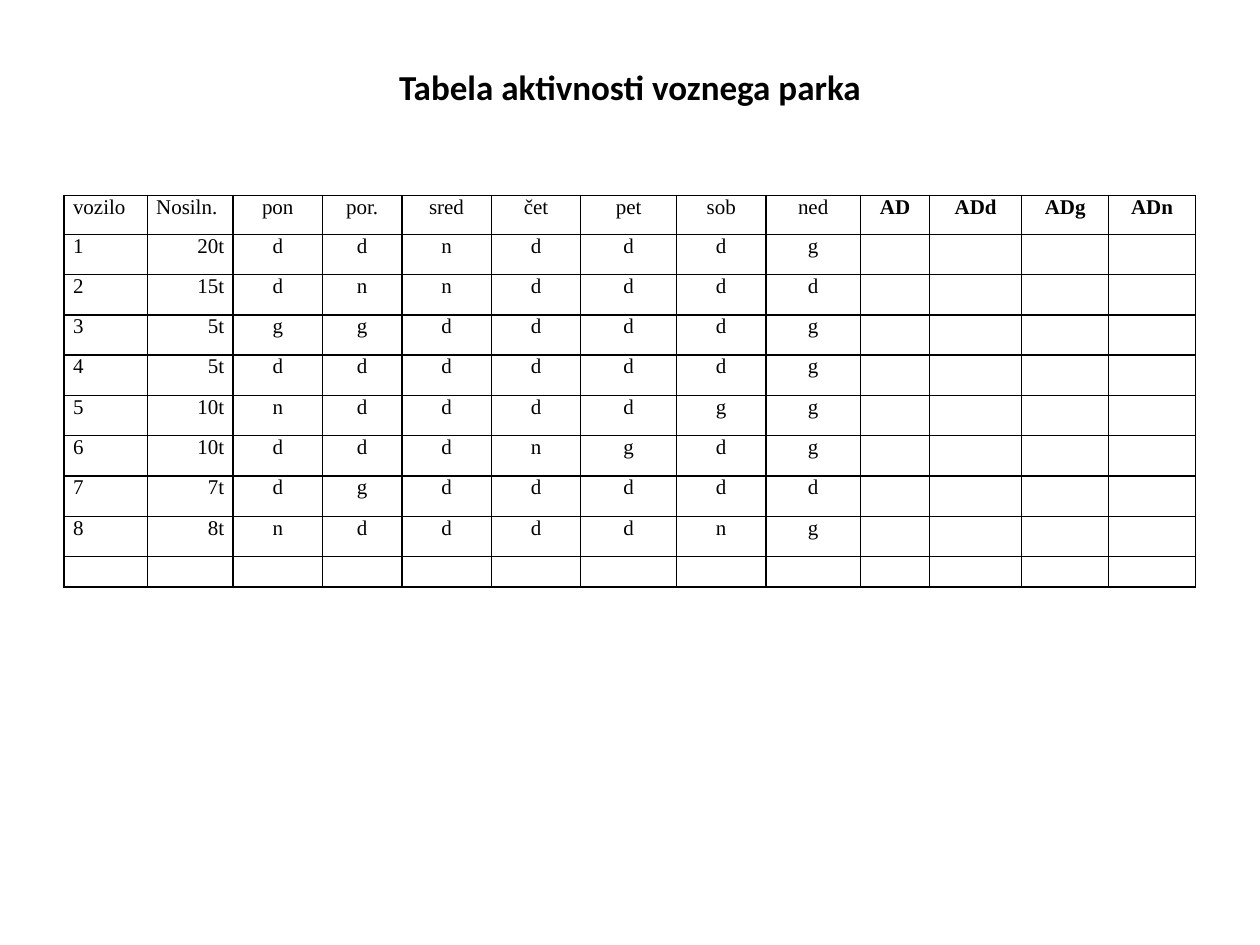
from dataclasses import dataclass

from lxml import etree
from pptx import Presentation
from pptx import util as u
from pptx.dml.color import RGBColor
from pptx.enum import text
from pptx.oxml import ns


@dataclass(frozen=True)
class Theme:
    ink: str = "000000"
    title_font: str = "Calibri"
    table_font: str = "Times New Roman"
    title_size: int = 20
    table_size: int = 12
    border_width: int = 1


THEME = Theme()
HEADINGS = ["vozilo", "Nosiln.", "pon", "por.", "sred", "čet", "pet",
            "sob", "ned", "AD", "ADd", "ADg", "ADn"]
FLEET = [
    ("20t", "ddndddg"),
    ("15t", "dnndddd"),
    ("5t", "ggddddg"),
    ("5t", "ddddddg"),
    ("10t", "nddddgg"),
    ("10t", "dddngdg"),
    ("7t", "dgddddd"),
    ("8t", "nddddng"),
]
COLUMN_WIDTHS = [0.66, 0.68, 0.71, 0.63, 0.71, 0.71, 0.76,
                 0.71, 0.75, 0.55, 0.73, 0.69, 0.69]
ROW_HEIGHTS = [0.31] + [0.32] * len(FLEET) + [0.24]
FIRST_TOTAL = HEADINGS.index("AD")


def format_runs(paragraph, font, size, bold):
    for run in paragraph.runs:
        run.font.name = font
        run.font.size = u.Pt(size)
        run.font.bold = bold
        run.font.color.rgb = RGBColor.from_string(THEME.ink)


def add_title(slide, wording):
    title = slide.shapes.title
    title.left, title.top = u.Inches(0.5), u.Inches(0.3)
    title.width, title.height = u.Inches(9), u.Inches(0.77)
    frame = title.text_frame
    frame.text = wording
    frame.vertical_anchor = text.MSO_ANCHOR.MIDDLE
    frame.paragraphs[0].alignment = text.PP_ALIGN.CENTER
    format_runs(frame.paragraphs[0], THEME.title_font, THEME.title_size, True)


def add_borders(cell):
    properties = cell._tc.get_or_add_tcPr()
    for side in ("a:lnL", "a:lnR", "a:lnT", "a:lnB"):
        border = etree.SubElement(properties, ns.qn(side), w=str(u.Pt(THEME.border_width)))
        fill = etree.SubElement(border, ns.qn("a:solidFill"))
        etree.SubElement(fill, ns.qn("a:srgbClr"), val=THEME.ink)


def alignment_for(row, column):
    if column == 0 or (row == 0 and column == 1):
        return text.PP_ALIGN.LEFT
    return text.PP_ALIGN.RIGHT if column == 1 else text.PP_ALIGN.CENTER


def fill_cell(cell, wording, alignment, bold):
    cell.margin_left = cell.margin_right = u.Inches(0.07)
    cell.margin_top = cell.margin_bottom = 0
    cell.vertical_anchor = text.MSO_ANCHOR.TOP
    add_borders(cell)
    cell.fill.background()
    paragraph = cell.text_frame.paragraphs[0]
    paragraph.alignment = alignment
    if wording:
        paragraph.text = wording
        format_runs(paragraph, THEME.table_font, THEME.table_size, bold)
    else:
        etree.SubElement(paragraph._p, ns.qn("a:endParaRPr"), sz=str(THEME.table_size * 100))


def add_activity_table(slide):
    vehicles = [[str(number), load, *days] for number, (load, days) in enumerate(FLEET, 1)]
    entries = [HEADINGS, *vehicles, []]
    activity = slide.shapes.add_table(
        len(entries), len(HEADINGS), u.Inches(0.51), u.Inches(1.55),
        u.Inches(sum(COLUMN_WIDTHS)), u.Inches(sum(ROW_HEIGHTS))).table
    activity.first_row = False
    activity.horz_banding = False
    for column, width in zip(activity.columns, COLUMN_WIDTHS):
        column.width = u.Inches(width)
    for row, height in zip(activity.rows, ROW_HEIGHTS):
        row.height = u.Inches(height)
    for row, wordings in enumerate(entries):
        for column in range(len(HEADINGS)):
            wording = wordings[column] if column < len(wordings) else ""
            fill_cell(activity.cell(row, column), wording,
                      alignment_for(row, column), column >= FIRST_TOTAL)


def main():
    deck = Presentation()
    deck.slide_width, deck.slide_height = u.Inches(10), u.Inches(7.5)
    slide = deck.slides.add_slide(deck.slide_layouts[5])
    add_title(slide, "Tabela aktivnosti voznega parka")
    add_activity_table(slide)
    deck.save("out.pptx")


if __name__ == "__main__":
    main()
